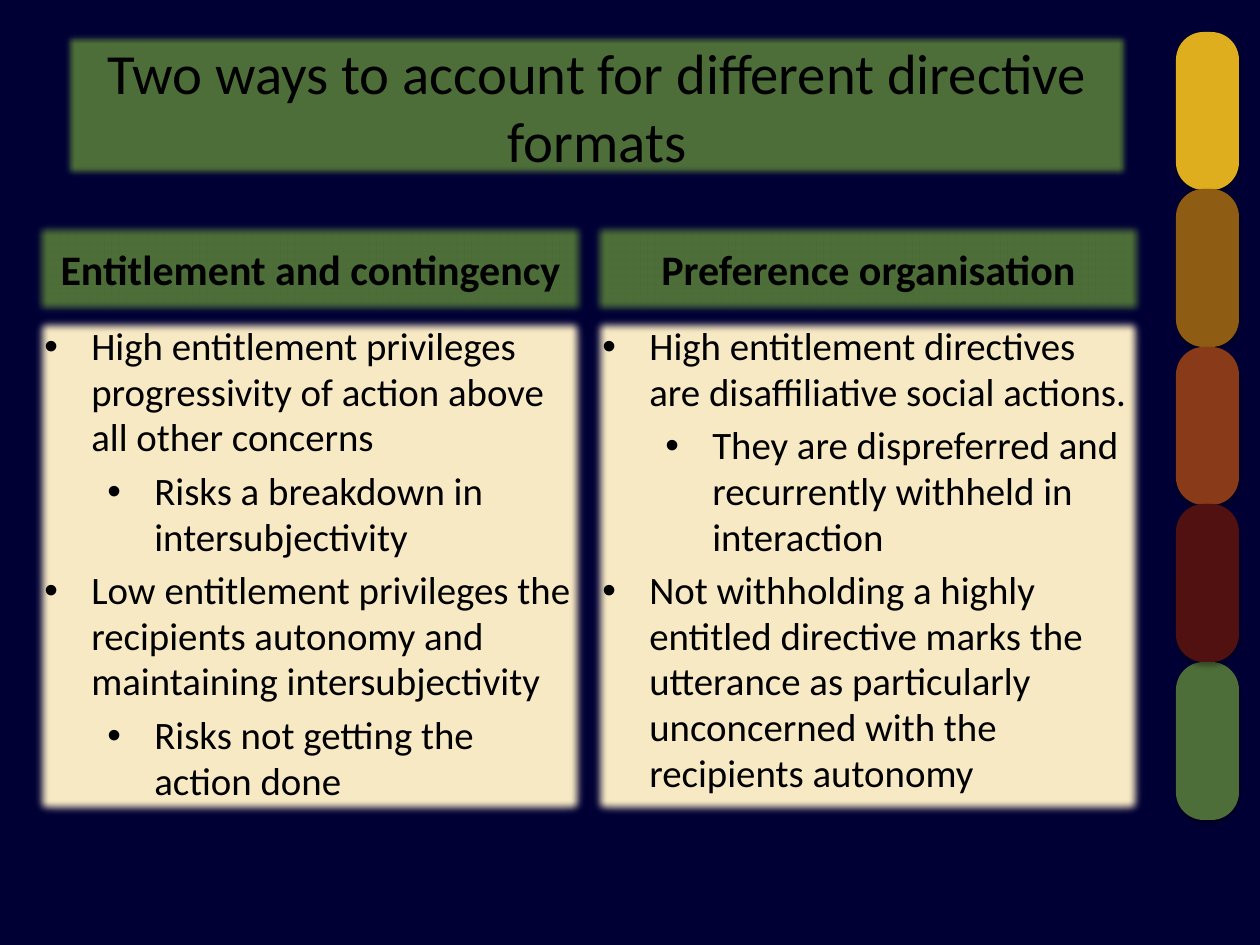
from lxml import etree
from pptx import Presentation
from pptx.dml.color import RGBColor
from pptx.enum import shapes, text
from pptx.oxml.ns import qn
from pptx.util import Emu, Pt

PX = 914400 / 126


def px(length):
    return Emu(round(length * PX))


def color(hex_value):
    return RGBColor.from_string(hex_value)


def add_xml(parent, tag, **attributes):
    values = {name: str(value) for name, value in attributes.items()}
    return etree.SubElement(parent, qn(tag), values)


class Deck:
    font, ink = "Calibri", "000000"
    green, cream = "4D6E38", "F7E9C3"
    hang, level_step = 47, 63

    def __init__(self, width, height, background):
        self.prs = Presentation()
        self.prs.slide_width, self.prs.slide_height = px(width), px(height)
        self.slide = self.prs.slides.add_slide(self.prs.slide_layouts[6])
        fill = self.slide.background.fill
        fill.solid()
        fill.fore_color.rgb = color(background)

    def block(self, kind, box, fill):
        shape = self.slide.shapes.add_shape(kind, *map(px, box))
        shape.shadow.inherit = False
        shape.fill.solid()
        shape.fill.fore_color.rgb = color(fill)
        shape.line.fill.background()
        return shape, shape._element.spPr.find(qn("a:effectLst"))

    def pill(self, box, fill):
        shape, effects = self.block(shapes.MSO_SHAPE.ROUNDED_RECTANGLE, box, fill)
        shape.adjustments[0] = 0.44
        shadow = add_xml(effects, "a:outerShdw", blurRad=Pt(3.1), dist=Pt(1.8),
                         dir=90 * 60000, algn="ctr", rotWithShape=0)
        shade = add_xml(shadow, "a:srgbClr", val="000000")
        add_xml(shade, "a:alpha", val=35000)

    def panel(self, box, fill, soft_edge):
        shape, effects = self.block(shapes.MSO_SHAPE.RECTANGLE, box, fill)
        add_xml(effects, "a:softEdge", rad=Pt(soft_edge))
        shape.text_frame.word_wrap = True
        return shape.text_frame

    def style(self, paragraph, size, bold=False):
        font = paragraph.font
        font.name, font.size, font.bold = self.font, Pt(size), bold
        font.color.rgb = color(self.ink)

    def heading(self, box, words, size, bold=False, soft_edge=5):
        frame = self.panel(box, self.green, soft_edge)
        frame.vertical_anchor = text.MSO_ANCHOR.MIDDLE
        frame.text = words
        paragraph = frame.paragraphs[0]
        paragraph.alignment = text.PP_ALIGN.CENTER
        self.style(paragraph, size, bold)

    def bullets(self, box, points, size=22.2):
        frame = self.panel(box, self.cream, soft_edge=5)
        frame.vertical_anchor = text.MSO_ANCHOR.TOP
        frame.margin_top = px(9)
        frame.text = "\n".join(words for _, words in points)
        for i, (paragraph, (level, _)) in enumerate(zip(frame.paragraphs, points)):
            props = paragraph._p.get_or_add_pPr()
            props.set("marL", str(px(self.hang + level * self.level_step)))
            props.set("indent", str(px(-self.hang)))
            add_xml(props, "a:buFont", typeface="Arial")
            add_xml(props, "a:buChar", char="•")
            paragraph.level = level
            paragraph.alignment = text.PP_ALIGN.LEFT
            paragraph.line_spacing = 0.98
            if i:
                paragraph.space_before = Pt(size * 0.2)
            self.style(paragraph, size)


PILLS = ["DFAE1F", "8F5C14", "893A19", "521111", Deck.green]
COLUMNS = [
    ("Entitlement and contingency", [
        (0, "High entitlement privileges progressivity of action above all other concerns"),
        (1, "Risks a breakdown in intersubjectivity"),
        (0, "Low entitlement privileges the recipients autonomy and maintaining intersubjectivity"),
        (1, "Risks not getting the action done"),
    ]),
    ("Preference organisation", [
        (0, "High entitlement directives are disaffiliative social actions."),
        (1, "They are dispreferred and recurrently withheld in interaction"),
        (0, "Not withholding a highly entitled directive marks the utterance "
            "as particularly unconcerned with the recipients autonomy"),
    ]),
]


def main():
    deck = Deck(1260, 945, "000035")

    # Side strip of pills, the lowest one at the back
    order = list(enumerate(PILLS))
    for row, fill in order[-1:] + order[:-1]:
        deck.pill((1176, 32 + row * 315 // 2, 63, 158), fill)

    # Title
    deck.heading((63, 32, 1068, 147),
                 "Two ways to account for different directive formats", 32.4, soft_edge=4)

    # Two columns
    for column, (name, points) in enumerate(COLUMNS):
        left = 32 + column * 558
        deck.heading((left, 220, 557, 98), name, 24, bold=True)
        deck.bullets((left, 315, 557, 504), points)

    deck.prs.save("out.pptx")


if __name__ == "__main__":
    main()
